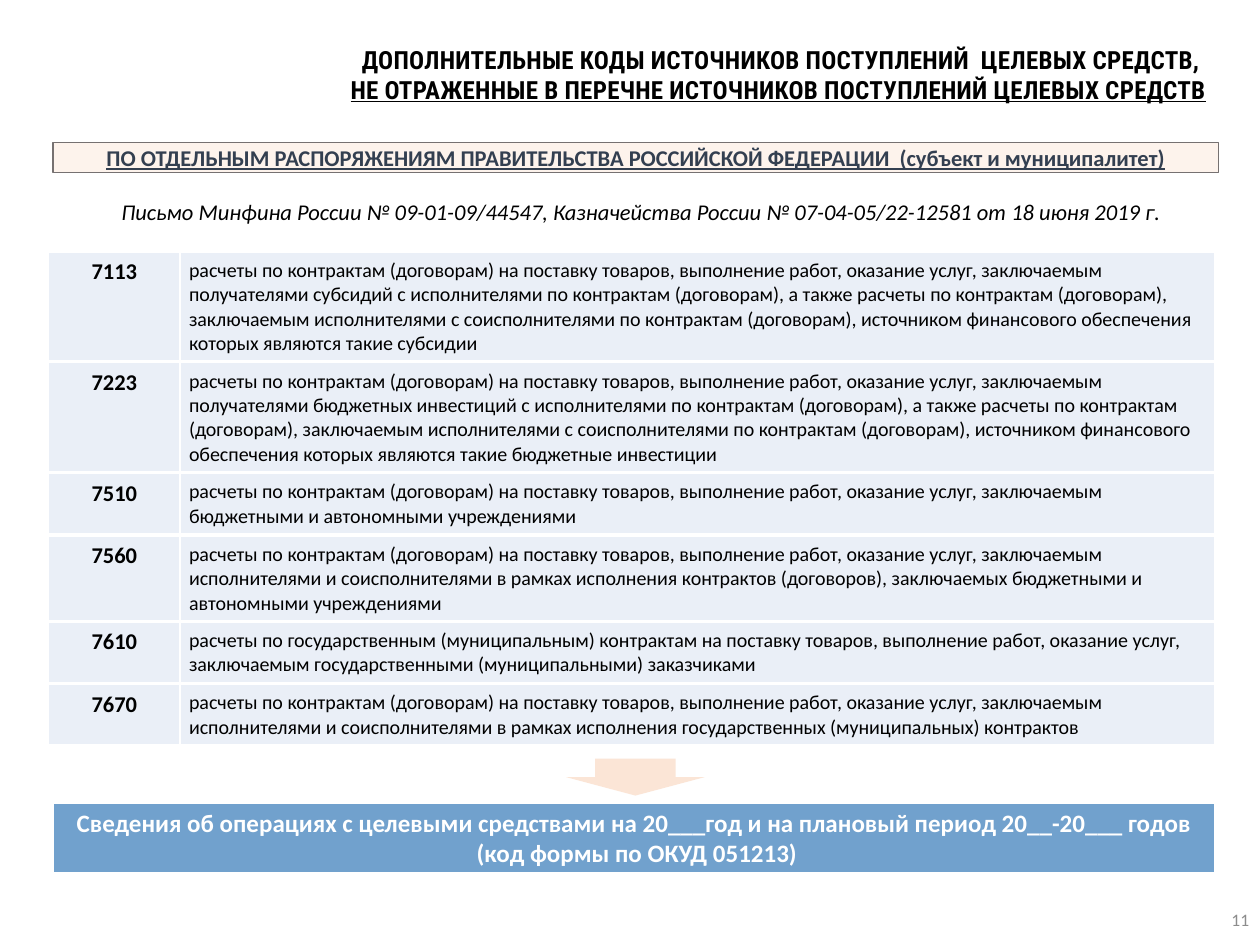
from lxml.etree import SubElement
from pptx import Presentation
from pptx.dml.color import RGBColor
from pptx.enum.shapes import MSO_SHAPE
from pptx.enum.text import MSO_ANCHOR, PP_ALIGN
from pptx.oxml.ns import qn
from pptx.util import Inches, Pt

BLACK = RGBColor(0x00, 0x00, 0x00)
WHITE = RGBColor(0xFF, 0xFF, 0xFF)
GREY = RGBColor(0x8C, 0x8C, 0x8C)
OUTLINE = RGBColor(0x76, 0x71, 0x71)
NAVY = RGBColor(0x33, 0x3F, 0x50)
PEACH = RGBColor(0xFB, 0xE5, 0xD6)
PALE_BLUE = RGBColor(0xEA, 0xEF, 0xF7)
BLUE = RGBColor(0x2E, 0x75, 0xB6)

CONTRACTS = ("расчеты по контрактам (договорам) на поставку товаров, выполнение работ, "
             "оказание услуг, заключаемым ")
CHAIN = ("с исполнителями по контрактам (договорам), а также расчеты по контрактам "
         "(договорам), заключаемым исполнителями с соисполнителями по контрактам "
         "(договорам), источником финансового обеспечения которых являются такие ")

# Code, description, number of text lines
CODES = [
    ("7113", CONTRACTS + "получателями субсидий " + CHAIN + "субсидии", 4),
    ("7223", CONTRACTS + "получателями бюджетных инвестиций " + CHAIN
     + "бюджетные инвестиции", 4),
    ("7510", CONTRACTS + "бюджетными и автономными учреждениями", 2),
    ("7560", CONTRACTS + "исполнителями и соисполнителями в рамках исполнения контрактов "
     "(договоров), заключаемых бюджетными и автономными учреждениями", 3),
    ("7610", "расчеты по государственным (муниципальным) контрактам на поставку товаров, "
     "выполнение работ, оказание услуг, заключаемым государственными (муниципальными) "
     "заказчиками", 2),
    ("7670", CONTRACTS + "исполнителями и соисполнителями в рамках исполнения "
     "государственных (муниципальных) контрактов", 2),
]


def write(frame, text, size, color, align=PP_ALIGN.LEFT, font="Calibri",
          bold=False, italic=False):
    paragraph = frame.paragraphs[0]
    paragraph.text = text
    paragraph.alignment = align
    for run in paragraph.runs:
        run.font.name, run.font.size = font, Pt(size)
        run.font.bold, run.font.italic = bold, italic
        run.font.color.rgb = color
    return paragraph.runs


def paint(fill, color, opacity=100):
    fill.solid()
    fill.fore_color.rgb = color
    if opacity < 100:
        rgb = fill._xPr.find(".//" + qn("a:srgbClr"))
        SubElement(rgb, qn("a:alpha"), val=str(opacity * 1000))


deck = Presentation()
deck.slide_width, deck.slide_height = Inches(14), Inches(10.5)
slide = deck.slides.add_slide(deck.slide_layouts[5])
shapes = slide.shapes

# Grid of 140 columns by 105 rows
COL = deck.slide_width / 140
ROW = deck.slide_height / 105

# Title
title = shapes.title
title.left, title.top = int(3.9 * COL), int(4.4 * ROW)
title.width, title.height = int(131.1 * COL), int(7.7 * ROW)
title.text_frame.word_wrap = True
title.text_frame.vertical_anchor = MSO_ANCHOR.TOP
title_runs = write(title.text_frame,
                   "ДОПОЛНИТЕЛЬНЫЕ КОДЫ ИСТОЧНИКОВ ПОСТУПЛЕНИЙ  ЦЕЛЕВЫХ СРЕДСТВ, \n"
                   "НЕ ОТРАЖЕННЫЕ В ПЕРЕЧНЕ ИСТОЧНИКОВ ПОСТУПЛЕНИЙ ЦЕЛЕВЫХ СРЕДСТВ",
                   20, BLACK, PP_ALIGN.RIGHT, "Roboto Condensed", bold=True)
for run in title_runs:
    run.font._element.set("spc", "20")
title_runs[-1].font.underline = True

# Heading bar
heading = shapes.add_shape(MSO_SHAPE.RECTANGLE, int(5.9 * COL), int(15.8 * ROW),
                           int(129.5 * COL), int(3.4 * ROW))
heading.shadow.inherit = False
paint(heading.fill, PEACH, 44)
heading.line.color.rgb = OUTLINE
heading.line.width = Pt(1)
heading.text_frame.vertical_anchor = MSO_ANCHOR.MIDDLE
heading_runs = write(heading.text_frame,
                     "ПО ОТДЕЛЬНЫМ РАСПОРЯЖЕНИЯМ ПРАВИТЕЛЬСТВА РОССИЙСКОЙ ФЕДЕРАЦИИ  "
                     "(субъект и муниципалитет)", 18, NAVY, PP_ALIGN.CENTER, bold=True)
heading_runs[0].font.underline = True

# Reference to the letter
letter = shapes.add_textbox(int(12.5 * COL), int(21.5 * ROW),
                            int(117.9 * COL), int(4 * ROW))
letter.text_frame.word_wrap = True
write(letter.text_frame, "Письмо Минфина России № 09-01-09/44547, Казначейства России "
      "№ 07-04-05/22-12581 от 18 июня 2019 г.", 18, BLACK, italic=True)

# Table of codes: row height follows the number of lines
heights = [int((1.5 + 2.7 * lines) * ROW) for _, _, lines in CODES]
codes = shapes.add_table(len(CODES), 2, int(5.4 * COL), int(27.9 * ROW),
                         int(129.6 * COL), sum(heights)).table
codes.first_row = codes.horz_banding = False
codes.columns[0].width = int(14.6 * COL)
codes.columns[1].width = int(115 * COL)
for row, height, (code, description, _) in zip(codes.rows, heights, CODES):
    row.height = height
    code_cell, description_cell = row.cells
    for cell in row.cells:
        cell.margin_top = cell.margin_bottom = Inches(0.08)
        borders = cell._tc.get_or_add_tcPr()
        for side, points in (("L", 1), ("R", 1), ("T", 3), ("B", 3)):
            border = SubElement(borders, qn("a:ln" + side), w=str(Pt(points)))
            SubElement(SubElement(border, qn("a:solidFill")), qn("a:srgbClr"),
                       val=str(WHITE))
        paint(cell.fill, PALE_BLUE)
    write(code_cell.text_frame, code, 18, BLACK, PP_ALIGN.CENTER, bold=True)
    write(description_cell.text_frame, description, 16, BLACK)

# Arrow down to the resulting form
arrow = shapes.add_shape(MSO_SHAPE.DOWN_ARROW, int(62.9 * COL), int(84.3 * ROW),
                         int(15.4 * COL), int(4.1 * ROW))
arrow.adjustments[0], arrow.adjustments[1] = 0.58, 0.5
arrow.shadow.inherit = False
paint(arrow.fill, PEACH)
arrow.line.fill.background()

# Resulting form
form = shapes.add_table(1, 1, int(5.9 * COL), int(89.3 * ROW),
                        int(129.1 * COL), int(7.7 * ROW)).table
form.first_row = form.horz_banding = False
form_cell = form.cell(0, 0)
paint(form_cell.fill, BLUE, 68)
write(form_cell.text_frame,
      "Сведения об операциях с целевыми средствами на 20___год "
      "и на плановый период 20__-20___ годов\n (код формы по ОКУД 051213)",
      20, WHITE, PP_ALIGN.CENTER, bold=True)

# Page number
page = shapes.add_textbox(int(108.5 * COL), int(99.4 * ROW),
                          int(31.5 * COL), int(5.6 * ROW))
page.text_frame.word_wrap = True
page.text_frame.vertical_anchor = MSO_ANCHOR.MIDDLE
page.text_frame.margin_right = Inches(0.12)
write(page.text_frame, "11", 14, GREY, PP_ALIGN.RIGHT)

deck.save("out.pptx")
